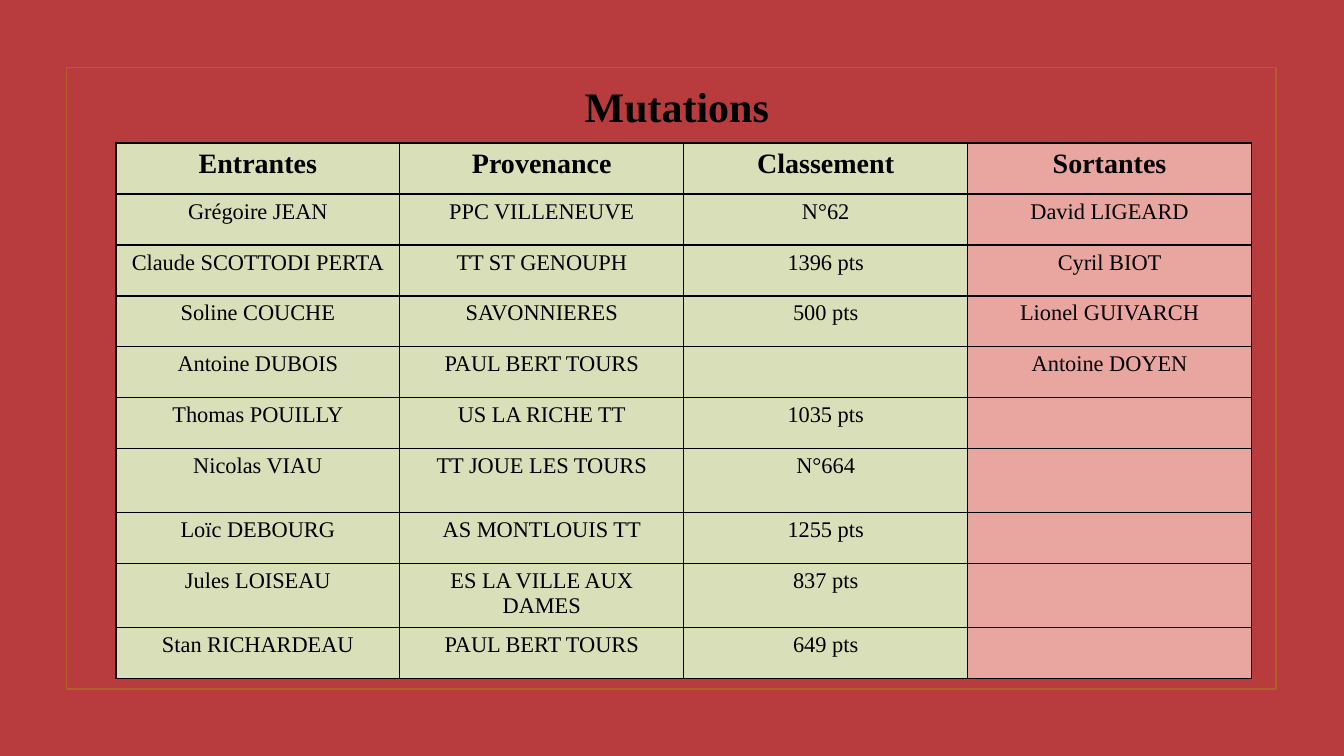
from lxml import etree
from pptx import Presentation
from pptx.dml.color import RGBColor
from pptx.enum import shapes, text
from pptx.oxml.ns import qn
from pptx.util import Pt

TITLE = "Mutations"
HEADERS = ["Entrantes", "Provenance", "Classement", "Sortantes"]
TRANSFERS = [
    ("Grégoire JEAN", "PPC VILLENEUVE", "N°62", "David LIGEARD"),
    ("Claude SCOTTODI PERTA", "TT ST GENOUPH", "1396 pts", "Cyril BIOT"),
    ("Soline COUCHE", "SAVONNIERES", "500 pts", "Lionel GUIVARCH"),
    ("Antoine DUBOIS", "PAUL BERT TOURS", "", "Antoine DOYEN"),
    ("Thomas POUILLY", "US LA RICHE TT", "1035 pts", ""),
    ("Nicolas VIAU", "TT JOUE LES TOURS", "N°664", ""),
    ("Loïc DEBOURG", "AS MONTLOUIS TT", "1255 pts", ""),
    ("Jules LOISEAU", "ES LA VILLE AUX DAMES", "837 pts", ""),
    ("Stan RICHARDEAU", "PAUL BERT TOURS", "649 pts", ""),
]

FONT = "Times New Roman"
RED = RGBColor(0xB8, 0x3C, 0x3E)
BROWN = RGBColor(0xB1, 0x5E, 0x28)
GREEN = RGBColor(0xD8, 0xDF, 0xB9)
PINK = RGBColor(0xE9, 0xA5, 0x9F)
BLACK = RGBColor(0, 0, 0)

TABLE_LEFT, TABLE_TOP = 82.8, 102.2
COL_WIDTH, ROW_HEIGHT, TALL_HEIGHT = 202.8, 36.4, 45.7
TALL_ROWS = {6, 8}


def style(p, size, bold):
    p.alignment = text.PP_ALIGN.CENTER
    p.font.name = FONT
    p.font.size = Pt(size)
    p.font.bold = bold
    p.font.color.rgb = BLACK


def add_borders(cell, color, width):
    """Draw all four sides; the lines must come before the fill in tcPr."""
    tcPr = cell._tc.get_or_add_tcPr()
    for i, side in enumerate(("a:lnL", "a:lnR", "a:lnT", "a:lnB")):
        ln = etree.Element(qn(side), w=str(Pt(width)))
        fill = etree.SubElement(ln, qn("a:solidFill"))
        etree.SubElement(fill, qn("a:srgbClr"), val=str(color))
        tcPr.insert(i, ln)


def add_frame(slide):
    sp = slide.shapes.add_shape(shapes.MSO_SHAPE.RECTANGLE,
                                Pt(47.5), Pt(48.2), Pt(864), Pt(444))
    sp.shadow.inherit = False
    sp.fill.background()
    sp.line.color.rgb = BROWN
    sp.line.width = Pt(1.25)


def add_title(slide):
    sp = slide.shapes.title
    sp.left, sp.top, sp.width, sp.height = Pt(204.5), Pt(54), Pt(558), Pt(43.9)
    tf = sp.text_frame
    tf.text = TITLE
    tf.auto_size = text.MSO_AUTO_SIZE.NONE
    tf.vertical_anchor = text.MSO_ANCHOR.TOP
    style(tf.paragraphs[0], 30, True)


def add_transfers(slide):
    rows = [HEADERS, *TRANSFERS]
    heights = [TALL_HEIGHT if i in TALL_ROWS else ROW_HEIGHT for i in range(len(rows))]
    table = slide.shapes.add_table(
        len(rows), len(HEADERS), Pt(TABLE_LEFT), Pt(TABLE_TOP),
        Pt(COL_WIDTH * len(HEADERS)), Pt(sum(heights))).table
    table.horz_banding = False
    for column in table.columns:
        column.width = Pt(COL_WIDTH)
    for r, (values, height) in enumerate(zip(rows, heights)):
        table.rows[r].height = Pt(height)
        for c, value in enumerate(values):
            cell = table.cell(r, c)
            cell.text = value
            style(cell.text_frame.paragraphs[0], 20 if r == 0 else 16, r == 0)
            cell.fill.solid()
            cell.fill.fore_color.rgb = PINK if HEADERS[c] == "Sortantes" else GREEN
            add_borders(cell, BLACK, 1)


def main():
    prs = Presentation()
    prs.slide_width, prs.slide_height = Pt(960), Pt(540)
    slide = prs.slides.add_slide(prs.slide_layouts[5])
    slide.background.fill.solid()
    slide.background.fill.fore_color.rgb = RED
    add_frame(slide)
    add_title(slide)
    add_transfers(slide)
    prs.save("out.pptx")


if __name__ == "__main__":
    main()
